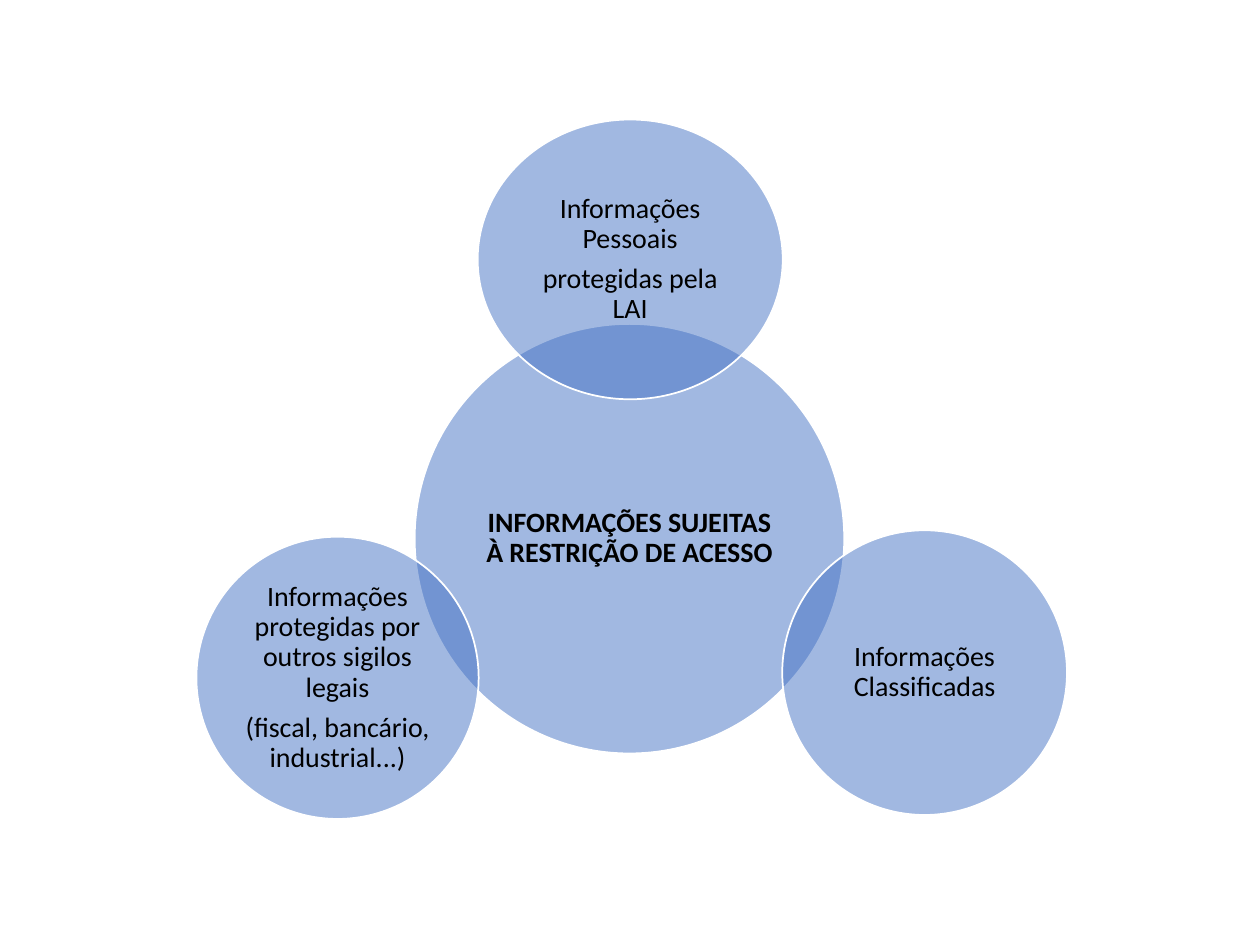
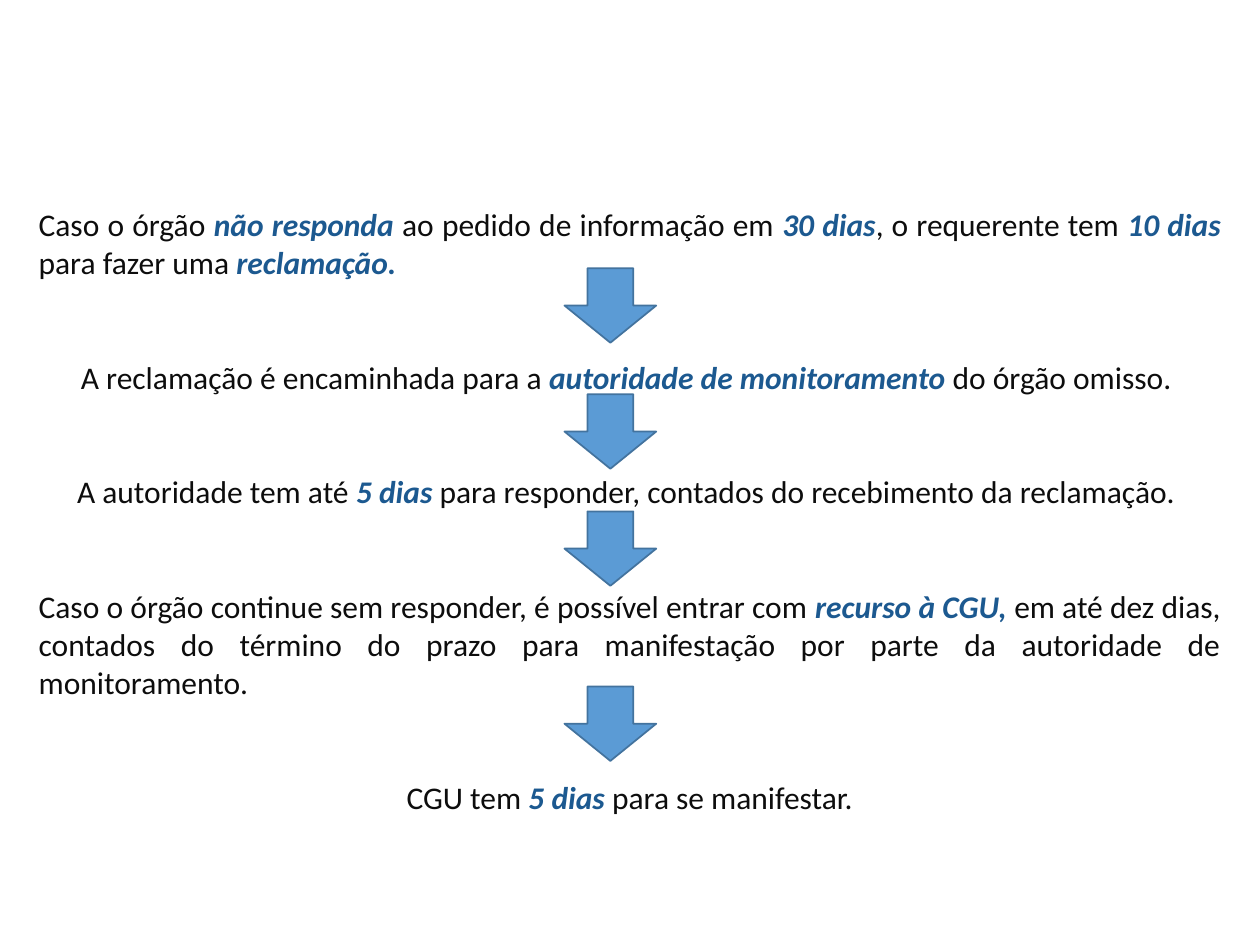
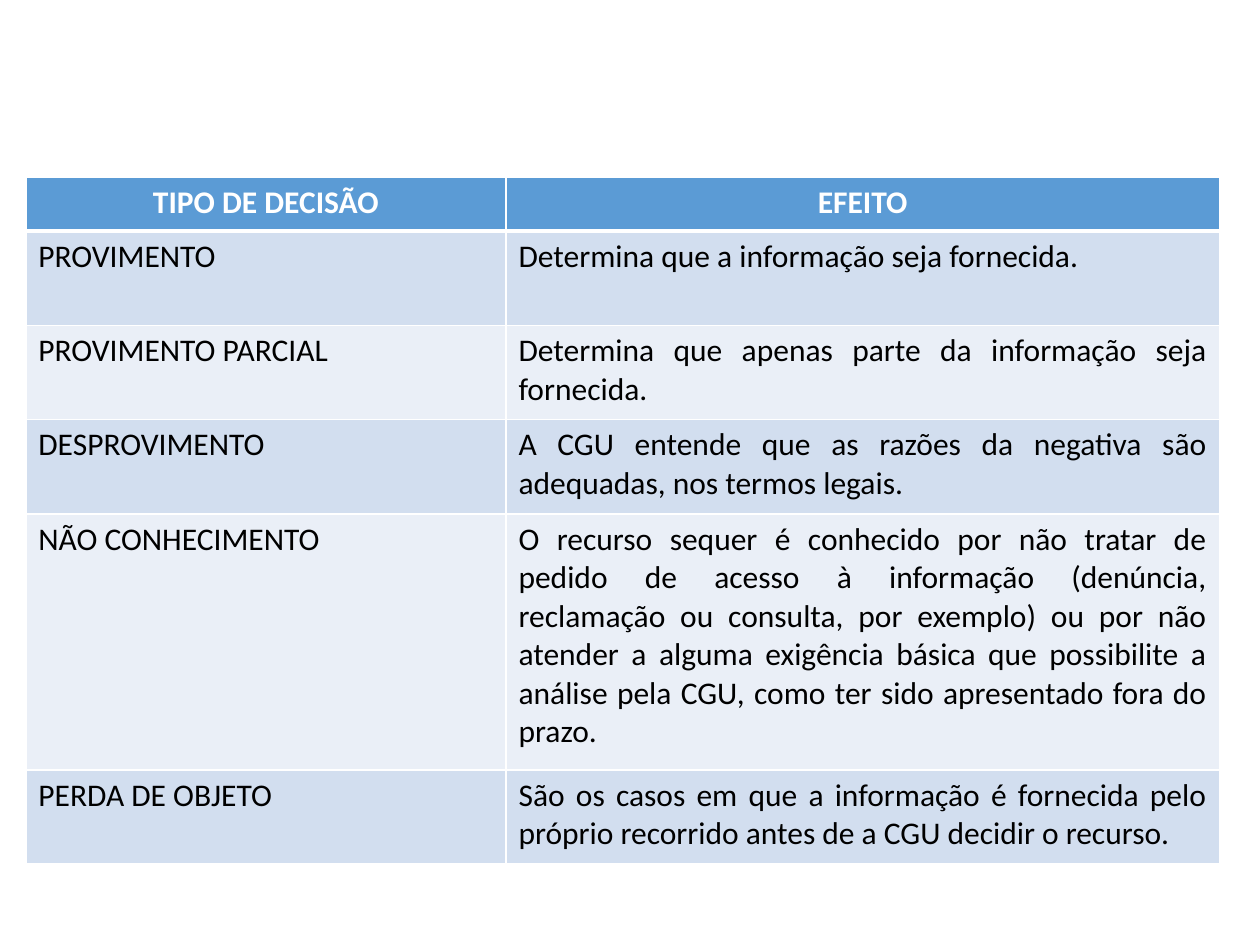
from lxml import etree
from pptx import Presentation
from pptx.dml.color import RGBColor
from pptx.enum.shapes import MSO_SHAPE
from pptx.enum.text import MSO_ANCHOR, PP_ALIGN
from pptx.oxml.ns import qn
from pptx.util import Cm, Pt

OVAL, ARROW = MSO_SHAPE.OVAL, MSO_SHAPE.DOWN_ARROW
MIDDLE = MSO_ANCHOR.MIDDLE
LEFT, CENTER, JUST = PP_ALIGN.LEFT, PP_ALIGN.CENTER, PP_ALIGN.JUSTIFY

WHITE = RGBColor(0xFF, 0xFF, 0xFF)
BLACK = RGBColor(0x00, 0x00, 0x00)
INK = RGBColor(0x0D, 0x0D, 0x0D)
NAVY = RGBColor(0x1C, 0x59, 0x90)
ROYAL = RGBColor(0x44, 0x72, 0xC4)
BLUE = RGBColor(0x5B, 0x9B, 0xD5)
EDGE = RGBColor(0x43, 0x73, 0x9E)
BANDS = RGBColor(0xD2, 0xDE, 0xEF), RGBColor(0xEA, 0xEF, 0xF7)

CIRCLES = [
    (8.36, 6.53, 8.66, 8.66, True, ["INFORMAÇÕES SUJEITAS À RESTRIÇÃO DE ACESSO"]),
    (9.63, 2.41, 6.15, 5.64, False, ["Informações Pessoais", "protegidas pela LAI"]),
    (15.77, 10.69, 5.74, 5.74, False, ["Informações Classificadas"]),
    (3.96, 10.82, 5.69, 5.69, False,
     ["Informações protegidas por outros sigilos legais",
      "(fiscal, bancário, industrial...)"]),
]

# Text between asterisks is emphasised.
STEPS = [
    (JUST, "Caso o órgão *não responda *ao pedido de informação em *30 dias*, "
           "o requerente tem *10 dias *para fazer uma *reclamação.*"),
    (CENTER, "A reclamação é encaminhada para a *autoridade de monitoramento *"
             "do órgão omisso. "),
    (CENTER, "A autoridade tem até *5 dias *para responder, contados do "
             "recebimento da reclamação. "),
    (JUST, "Caso o órgão continue sem responder, é possível entrar com "
           "*recurso à CGU, *em até dez dias, contados do término do prazo "
           "para manifestação por parte da autoridade de monitoramento."),
    (CENTER, "CGU tem *5 dias *para se manifestar."),
]
ARROW_TOPS = [5.41, 7.95, 10.31, 13.84]

RULINGS = [
    ("TIPO DE DECISÃO", "EFEITO"),
    ("PROVIMENTO", "Determina que a informação seja fornecida."),
    ("PROVIMENTO PARCIAL",
     "Determina que apenas parte da informação seja fornecida."),
    ("DESPROVIMENTO",
     "A CGU entende que as razões da negativa são adequadas, nos termos legais."),
    ("NÃO CONHECIMENTO",
     "O recurso sequer é conhecido por não tratar de pedido de acesso à "
     "informação (denúncia, reclamação ou consulta, por exemplo) ou por não "
     "atender a alguma exigência básica que possibilite a análise pela CGU, "
     "como ter sido apresentado fora do prazo."),
    ("PERDA DE OBJETO",
     "São os casos em que a informação é fornecida pelo próprio recorrido "
     "antes de a CGU decidir o recurso."),
]


class Deck:
    """Holds the style and the slide being filled; lengths are in cm."""
    face = "Calibri"
    size = 18

    def __init__(self):
        self.prs = Presentation()
        self.prs.slide_width, self.prs.slide_height = Cm(25.4), Cm(19.05)

    def page(self):
        self.shapes = self.prs.slides.add_slide(self.prs.slide_layouts[6]).shapes

    def style(self, para, color, align, size=size, bold=False):
        para.alignment = align
        font = para.font
        font.name, font.size, font.bold = self.face, Pt(size), bold
        font.color.rgb = color

    def shape(self, kind, box, fill, line):
        item = self.shapes.add_shape(kind, *map(Cm, box))
        item.shadow.inherit = False
        item.fill.solid()
        item.fill.fore_color.rgb = fill
        item.line.color.rgb = line
        item.line.width = Pt(1)
        return item

    def circle(self, box, lines, bold):
        """Draw a half-transparent circle with centred text."""
        item = self.shape(OVAL, box, ROYAL, WHITE)
        tint = item.fill._xPr.find(qn("a:solidFill"))[0]
        etree.SubElement(tint, qn("a:alpha")).set("val", "50000")
        frame = item.text_frame
        frame.word_wrap = True
        frame.vertical_anchor = MIDDLE
        frame.margin_left = frame.margin_right = Cm(0.05)
        frame.margin_top = frame.margin_bottom = Cm(0.05)
        for i, line in enumerate(lines):
            para = frame.add_paragraph() if i else frame.paragraphs[0]
            para.text = line
            para.line_spacing = 0.9
            para.space_after = Pt(5.6)
            self.style(para, BLACK, CENTER, 16, bold)

    def text(self, box, items, gap):
        frame = self.shapes.add_textbox(*map(Cm, box)).text_frame
        frame.word_wrap = True
        for i, (align, words) in enumerate(items):
            para = frame.add_paragraph() if i else frame.paragraphs[0]
            if i:
                para.space_before = Pt(gap)
            self.style(para, INK, align)
            for j, part in enumerate(words.split("*")):
                if not part:
                    continue
                run = para.add_run()
                run.text = part
                if j % 2:
                    run.font.bold = run.font.italic = True
                    run.font.color.rgb = NAVY

    def border(self, cell, widths):
        """Set white borders, with widths in points by side."""
        props = cell._tc.get_or_add_tcPr()
        for i, side in enumerate("LRTB"):
            line = etree.Element(qn("a:ln" + side), w=str(Pt(widths.get(side, 1))))
            fill = etree.SubElement(line, qn("a:solidFill"))
            etree.SubElement(fill, qn("a:srgbClr"), val=str(WHITE))
            props.insert(i, line)

    def table(self, left, top, cols, rows, data):
        box = map(Cm, (left, top, sum(cols), sum(rows)))
        grid = self.shapes.add_table(len(rows), len(cols), *box).table
        for col, width in zip(grid.columns, cols):
            col.width = Cm(width)
        for r, (high, words) in enumerate(zip(rows, data)):
            grid.rows[r].height = Cm(high)
            for c, word in enumerate(words):
                cell = grid.cell(r, c)
                cell.text = word
                cell.fill.solid()
                para = cell.text_frame.paragraphs[0]
                if r == 0:
                    cell.fill.fore_color.rgb = BLUE
                    self.style(para, WHITE, CENTER, bold=True)
                else:
                    cell.fill.fore_color.rgb = BANDS[(r - 1) % 2]
                    self.style(para, BLACK, JUST if c else LEFT)
                self.border(cell, {0: {"B": 3}, 1: {"T": 3}}.get(r, {}))


def main():
    deck = Deck()

    deck.page()
    for *box, bold, lines in CIRCLES:
        deck.circle(box, lines, bold)

    deck.page()
    deck.text((0.53, 4.01, 24.33, 12.57), STEPS, 44)
    for top in ARROW_TOPS:
        deck.shape(ARROW, (11.38, top, 1.85, 1.5), BLUE, EDGE)

    deck.page()
    deck.table(0.52, 3.57, [9.68, 14.38], [1.09, 1.9, 1.9, 1.9, 5.16, 1.9], RULINGS)

    deck.prs.save("out.pptx")


if __name__ == "__main__":
    main()
